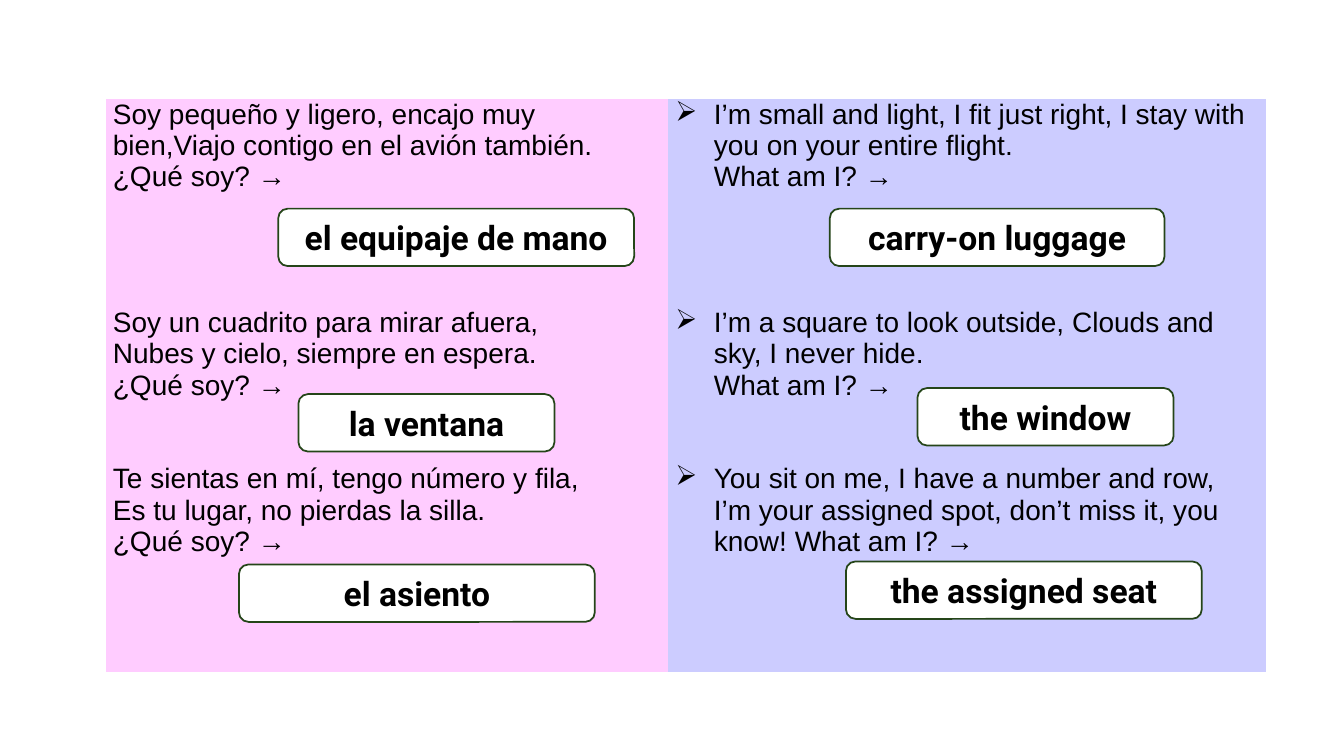
from lxml.etree import SubElement as Sub
from pptx import Presentation
from pptx.dml.color import RGBColor as Rgb
from pptx.enum.shapes import MSO_SHAPE as Shape
from pptx.enum.text import MSO_ANCHOR as Anchor, PP_ALIGN as Align
from pptx.oxml.ns import qn
from pptx.util import Inches, Pt

HUES = {"pink": "FFCCFF", "blue": "CCCCFF", "white": "FFFFFF",
        "green": "254519", "black": "000000"}
SIZE = (13.33, 7.5)
LEFT, TOP = 1.05, 0.98
COLS = (5.58, 5.93)
ROWS = (2.07, 1.55, 2.07)
TALL = 0.57
INDENT = 0.38
BARE = "{2D5ABB26-0587-4C30-8999-92F81FD0307C}"
SIDES = (("pink", None), ("blue", "➢"))
RIDDLES = [
    ("Soy pequeño y ligero, encajo muy bien,Viajo contigo en el avión también.\n¿Qué soy? →",
     "I’m small and light, I fit just right, I stay with you on your entire flight.\nWhat am I? →"),
    ("Soy un cuadrito para mirar afuera,\nNubes y cielo, siempre en espera.\n¿Qué soy? →",
     "I’m a square to look outside, Clouds and sky, I never hide.\nWhat am I? →"),
    ("Te sientas en mí, tengo número y fila,\nEs tu lugar, no pierdas la silla.\n¿Qué soy? →",
     "You sit on me, I have a number and row,\n"
     "I’m your assigned spot, don’t miss it, you know! What am I? →"),
]
# Each answer: wording, offset from its cell, width
ANSWERS = [
    (("el equipaje de mano", 1.71, 1.09, 3.53), ("carry-on luggage", 1.6, 1.09, 3.32)),
    (("la ventana", 1.91, 0.86, 2.54), ("the window", 2.47, 0.8, 2.54)),
    (("el asiento", 1.32, 1, 3.53), ("the assigned seat", 1.76, 0.97, 3.53)),
]
BODY = {"size": Pt(20), "name": "Arial", "bold": False}
BOLD = {"size": Pt(24), "name": "Roboto", "bold": True}
PADS = {"margin_left": Inches(0.07), "margin_right": Inches(0.07),
        "margin_top": 0, "margin_bottom": 0}


def apply(thing, style):
    for key, value in style.items():
        setattr(thing, key, value)


def paint(fill, hue):
    fill.solid()
    fill.fore_color.rgb = Rgb.from_string(HUES[hue])


def write(para, words, style):
    para.text = words
    for run in para.runs:
        apply(run.font, style)
        run.font.color.rgb = Rgb.from_string(HUES["black"])


def mark(para, sign):
    props = para._p.get_or_add_pPr()
    props.set("marL", str(Inches(INDENT)))
    props.set("indent", str(-Inches(INDENT)))
    Sub(props, qn("a:buChar")).set("char", sign)


def add_grid(slide):
    frame = slide.shapes.add_table(len(ROWS), len(COLS), Inches(LEFT), Inches(TOP),
                                   Inches(sum(COLS)), Inches(sum(ROWS)))
    table = frame.table
    apply(table, {"first_row": False, "horz_banding": False})
    table._tbl.tblPr.find(qn("a:tableStyleId")).text = BARE
    for col, wide in zip(table.columns, COLS):
        col.width = Inches(wide)
    for row, high, riddles in zip(table.rows, ROWS, RIDDLES):
        row.height = Inches(high)
        for cell, words, (hue, sign) in zip(row.cells, riddles, SIDES):
            apply(cell, PADS)
            paint(cell.fill, hue)
            para = cell.text_frame.paragraphs[0]
            write(para, words, BODY)
            if sign:
                mark(para, sign)


def add_answer(slide, words, x, y, wide):
    box = slide.shapes.add_shape(Shape.ROUNDED_RECTANGLE, Inches(x), Inches(y),
                                 Inches(wide), Inches(TALL))
    box.shadow.inherit = False
    paint(box.fill, "white")
    paint(box.line.fill, "green")
    box.line.width = Pt(1.25)
    apply(box.text_frame, {"word_wrap": True, "vertical_anchor": Anchor.MIDDLE})
    para = box.text_frame.paragraphs[0]
    para.alignment = Align.CENTER
    write(para, words, BOLD)


def main():
    deck = Presentation()
    deck.slide_width, deck.slide_height = map(Inches, SIZE)
    slide = deck.slides.add_slide(deck.slide_layouts[6])
    add_grid(slide)
    for r, line in enumerate(ANSWERS):
        for c, (words, dx, dy, wide) in enumerate(line):
            add_answer(slide, words, LEFT + sum(COLS[:c]) + dx,
                       TOP + sum(ROWS[:r]) + dy, wide)
    deck.save("out.pptx")


if __name__ == "__main__":
    main()
